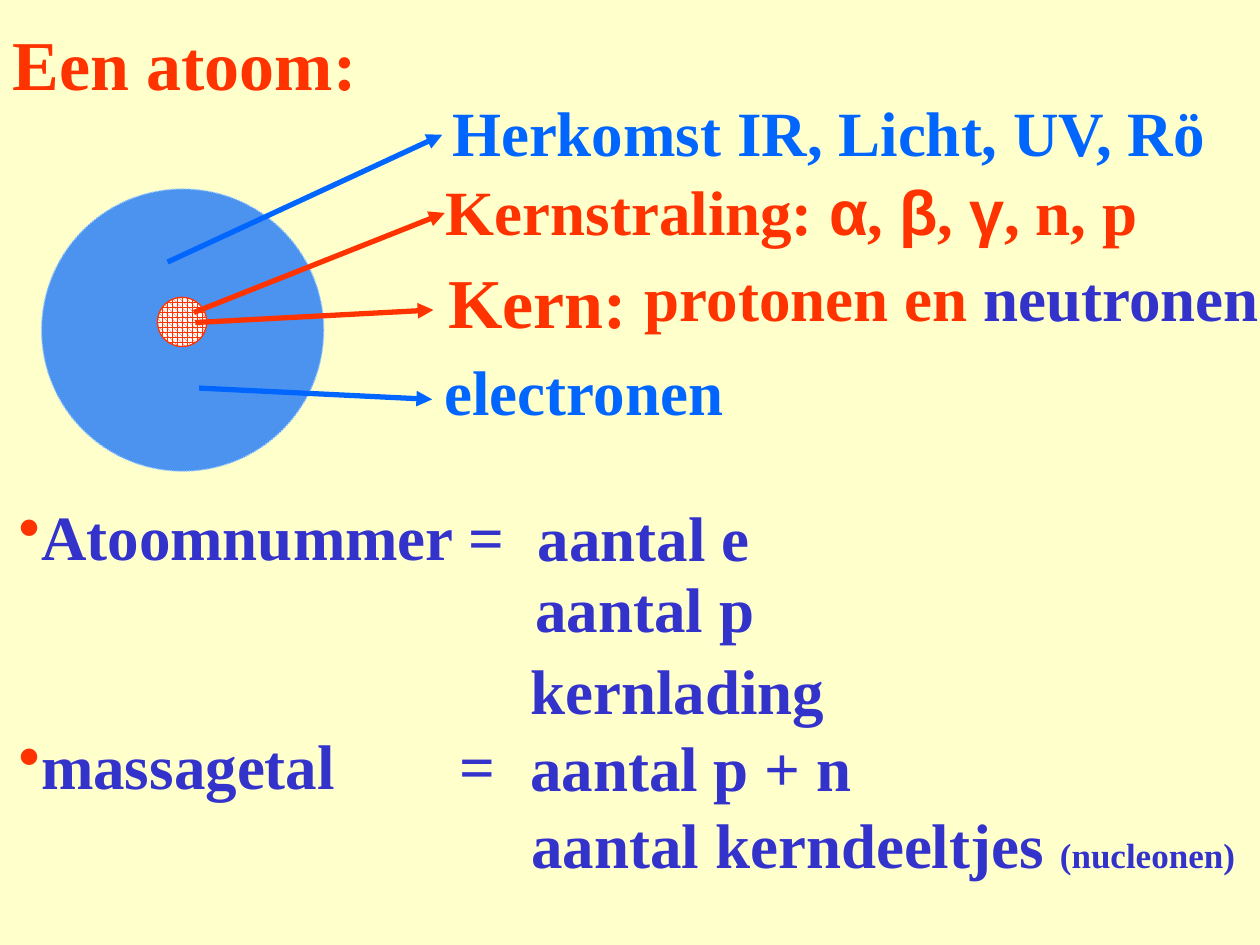
from typing import NamedTuple

from lxml.etree import SubElement
from pptx import Presentation
from pptx.dml.color import RGBColor
from pptx.enum.dml import MSO_LINE, MSO_PATTERN
from pptx.enum.shapes import MSO_CONNECTOR, MSO_SHAPE
from pptx.enum.text import MSO_ANCHOR, MSO_AUTO_SIZE, PP_ALIGN
from pptx.oxml.ns import qn
from pptx.util import Inches, Pt

CREAM = RGBColor(0xFF, 0xFF, 0xCC)
WHITE = RGBColor(0xFF, 0xFF, 0xFF)
RED = RGBColor(0xFF, 0x33, 0x00)
BLUE = RGBColor(0x00, 0x66, 0xFF)
PALE_BLUE = RGBColor(0x99, 0xCC, 0xFF)
INDIGO = RGBColor(0x33, 0x33, 0xCC)
SERIF, SANS = "Times New Roman", "Arial"


class Run(NamedTuple):
    text: str
    color: RGBColor = INDIGO
    size: int = 36
    font: str = SERIF


class Label(NamedTuple):
    box: tuple[float, float, float, float]
    runs: list[Run]
    bullet: bool = False


class Arrow(NamedTuple):
    start: tuple[float, float]
    end: tuple[float, float]
    color: RGBColor


RADIATION = [Run(text, RED, font=font) for text, font in (
    ("Kernstraling: ", SERIF), ("α", SANS), (", ", SERIF), ("β", SANS),
    (", ", SERIF), ("γ", SANS), (", n, p", SERIF))]

LABELS = [
    Label((3.49, 0.69, 7.28, 0.7), [Run("Herkomst IR, Licht, UV, Rö", BLUE)]),
    Label((3.44, 1.32, 6.25, 0.7), RADIATION),
    Label((5.02, 2, 5.65, 0.73), [Run("protonen en ", RED), Run("neutronen")]),
    Label((3.43, 2.75, 2.92, 0.75), [Run("electronen", BLUE)]),
    Label((0.05, 3.9, 4.58, 0.75), [Run("Atoomnummer =")], bullet=True),
    Label((4.17, 3.91, 4.75, 0.83), [Run("aantal e")]),
    Label((4.15, 4.47, 4.75, 0.83), [Run("aantal p")]),
    Label((4.11, 5.12, 4.75, 0.71), [Run("kernlading")]),
    Label((0.05, 5.72, 4.62, 0.75), [Run("massagetal\t=")], bullet=True),
    Label((4.11, 5.73, 5.25, 0.86), [Run("aantal p + n")]),
    Label((4.12, 6.34, 5.86, 0.83),
          [Run("aantal kerndeeltjes "), Run("(nucleonen)", size=20)]),
]

ARROWS = [
    Arrow((1.33, 2.08), (3.51, 1.07), BLUE),
    Arrow((1.54, 2.48), (3.53, 1.69), RED),
    Arrow((1.55, 2.56), (3.44, 2.46), RED),
    Arrow((1.58, 3.08), (3.43, 3.17), BLUE),
]


def write(sp, runs: list[Run], *, anchor=MSO_ANCHOR.TOP, bullet: bool = False) -> None:
    tf = sp.text_frame
    tf.word_wrap = True
    tf.auto_size = MSO_AUTO_SIZE.NONE
    tf.vertical_anchor = anchor
    p = tf.paragraphs[0]
    p.alignment = PP_ALIGN.LEFT
    for run in runs:
        r = p.add_run()
        r.text = run.text
        r.font.name, r.font.size, r.font.bold = run.font, Pt(run.size), True
        r.font.color.rgb = run.color
    if bullet:
        add_bullet(p)


def add_bullet(p) -> None:
    """Add a red bullet, and a tab stop that places the equals sign."""
    pPr = p._p.get_or_add_pPr()
    color = SubElement(pPr, qn("a:buClr"))
    SubElement(color, qn("a:srgbClr"), val=str(RED))
    SubElement(pPr, qn("a:buChar"), char="•")
    tabs = SubElement(pPr, qn("a:tabLst"))
    SubElement(tabs, qn("a:tab"), pos=str(Inches(3.5)), algn="l")


def place(sp, left: float, top: float, width: float, height: float) -> None:
    sp.left, sp.top = Inches(left), Inches(top)
    sp.width, sp.height = Inches(width), Inches(height)


def add_circle(s, kind: MSO_SHAPE, left: float, top: float, size: float, line: RGBColor):
    sp = s.shapes.add_shape(kind, Inches(left), Inches(top), Inches(size), Inches(size))
    sp.shadow.inherit = False
    sp.line.color.rgb = line
    sp.line.width = Pt(0.75)
    return sp


def add_atom(s) -> None:
    cloud = add_circle(s, MSO_SHAPE.OVAL, 0.33, 1.5, 2.24, PALE_BLUE)
    cloud.fill.solid()
    cloud.fill.fore_color.rgb = BLUE
    color = cloud.fill._xPr.find(qn("a:solidFill")).find(qn("a:srgbClr"))
    SubElement(color, qn("a:alpha"), val="70000")
    cloud.line.dash_style = MSO_LINE.ROUND_DOT

    nucleus = add_circle(s, MSO_SHAPE.FLOWCHART_CONNECTOR, 1.25, 2.36, 0.39, RED)
    nucleus.fill.patterned()
    nucleus.fill.pattern = MSO_PATTERN.SPHERE
    nucleus.fill.fore_color.rgb = RED
    nucleus.fill.back_color.rgb = WHITE


def add_arrow(s, arrow: Arrow) -> None:
    ends = [Inches(v) for v in arrow.start + arrow.end]
    line = s.shapes.add_connector(MSO_CONNECTOR.STRAIGHT, *ends)
    line.line.color.rgb = arrow.color
    line.line.width = Pt(3)
    SubElement(line.line._get_or_add_ln(), qn("a:tailEnd"), type="triangle")
    SubElement(line._element.spPr, qn("a:effectLst"))


def main() -> None:
    prs = Presentation()
    prs.slide_width, prs.slide_height = Inches(10), Inches(7.5)
    s = prs.slides.add_slide(prs.slide_layouts[0])
    s.background.fill.solid()
    s.background.fill.fore_color.rgb = CREAM

    title, nucleus_label = s.placeholders
    place(title, 0, 0, 8.5, 1)
    write(title, [Run("Een atoom:", RED, 40)], anchor=MSO_ANCHOR.MIDDLE)
    place(nucleus_label, 3.46, 2, 1.83, 1.08)
    write(nucleus_label, [Run("Kern:", RED, 40)])

    add_atom(s)
    for arrow in ARROWS:
        add_arrow(s, arrow)
    for label in LABELS:
        box = s.shapes.add_textbox(*map(Inches, label.box))
        write(box, label.runs, bullet=label.bullet)

    prs.save("out.pptx")


if __name__ == "__main__":
    main()
